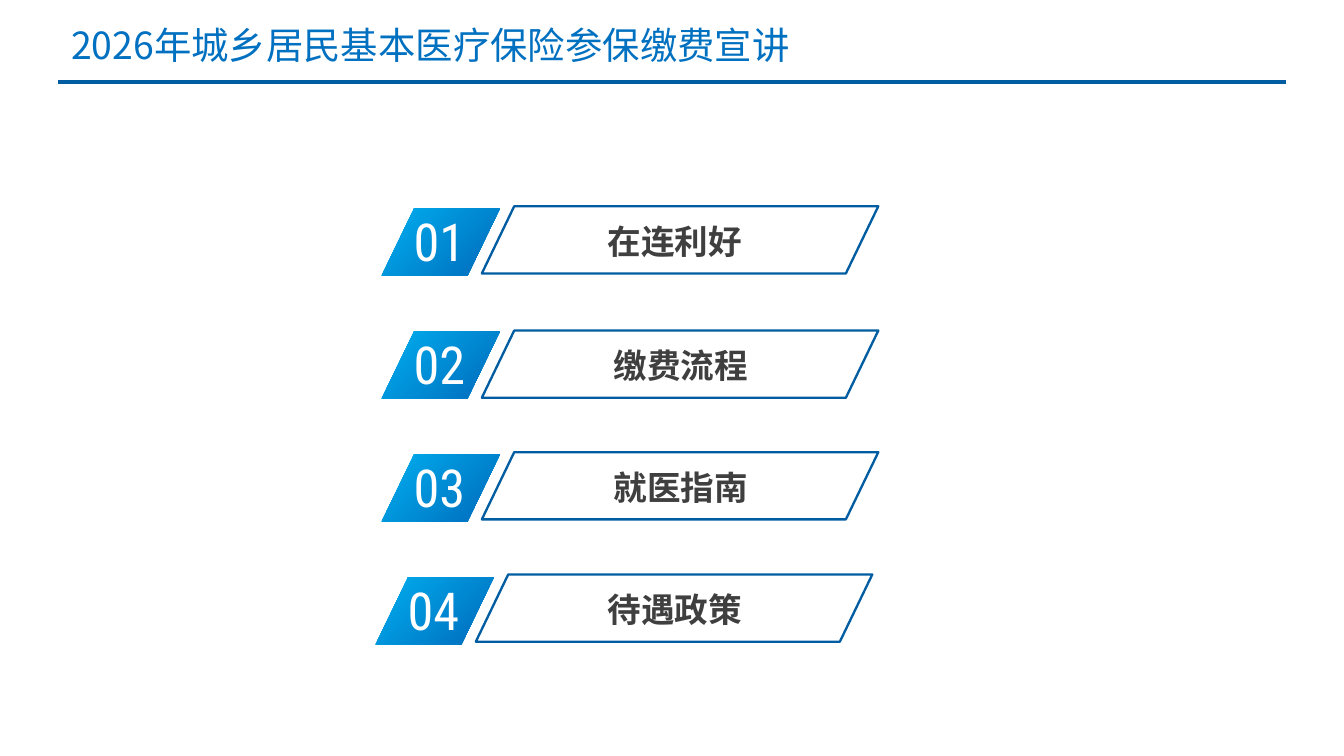
from lxml import etree
from pptx import Presentation
from pptx import util as u
from pptx.dml.color import RGBColor
from pptx.enum import shapes, text
from pptx.oxml.ns import qn

COLORS = {
    "rule": "005DA2",
    "title": "0070C0",
    "light": "00B0F0",
    "label": "3F3F3F",
    "number": "FFFFFF",
}
CJK = "Noto Sans CJK SC"
CONDENSED = "Roboto Condensed"
COLUMNS, ROWS = 100, 56.25
CELL = u.Inches(0.1)
SLANT = 0.482
FIRST_ROW, ROW_STEP = 15.5, 9.15
BAR_HEIGHT = 5

TOPICS = [
    ("在连利好", 0, -0.45, 15.35),
    ("缴费流程", 0, 0, 24.6),
    ("就医指南", 0, 0, 33.65),
    ("待遇政策", -0.45, 0, 42.75),
]


def color(name):
    return RGBColor.from_string(COLORS[name])


def grid(*cells):
    return [round(cell * CELL) for cell in cells]


def add_rule(slide):
    rule = slide.shapes.add_connector(
        shapes.MSO_CONNECTOR.STRAIGHT, *grid(95.7, 6.1, 4.3, 6.1)
    )
    rule.line.color.rgb = color("rule")
    rule.line.width = u.Pt(2)
    etree.SubElement(rule.element.spPr, qn("a:effectLst"))


def add_words(slide, place, words, size, face, shade, centered=False, bold=False):
    box = slide.shapes.add_textbox(*grid(*place))
    frame = box.text_frame
    frame.word_wrap = True
    frame.text = words
    paragraph = frame.paragraphs[0]
    if centered:
        paragraph.alignment = text.PP_ALIGN.CENTER
        frame.margin_left = frame.margin_right = u.Inches(0.07)
        frame.margin_top = frame.margin_bottom = u.Inches(0.04)
    font = paragraph.runs[0].font
    font.size = u.Pt(size)
    font.name = face
    font.bold = bold
    font.color.rgb = color(shade)
    properties = paragraph.runs[0].font._element
    etree.SubElement(properties, qn("a:ea"), typeface=face)


def add_slanted(slide, place):
    bar = slide.shapes.add_shape(shapes.MSO_SHAPE.PARALLELOGRAM, *grid(*place))
    bar.adjustments[0] = SLANT
    bar.shadow.inherit = False
    return bar


def add_badge(slide, left, top, number):
    badge = add_slanted(slide, (left, top, 8.8, BAR_HEIGHT))
    badge.line.fill.background()
    badge.fill.gradient()
    badge.fill.gradient_angle = 315
    start, end = badge.fill.gradient_stops
    start.color.rgb, start.position = color("light"), 0
    end.color.rgb, end.position = color("title"), 0.91
    add_words(slide, (left + 1.4, top - 0.4, 8.4, 4.9), number, 28, CONDENSED, "number")


def add_topic(slide, left, top, label, nudge):
    add_words(
        slide, (left + 4 + nudge, top + 0.7, 21.6, 3.8), label, 18, CJK, "label",
        centered=True, bold=True,
    )
    outline = add_slanted(slide, (left, top, 29.5, BAR_HEIGHT))
    outline.fill.background()
    outline.line.color.rgb = color("rule")
    outline.line.width = u.Pt(1.25)


def main():
    deck = Presentation()
    deck.slide_width, deck.slide_height = grid(COLUMNS, ROWS)
    slide = deck.slides.add_slide(deck.slide_layouts[6])
    add_rule(slide)
    add_words(
        slide, (4.3, 1.15, 76.9, 4.4), "2026年城乡居民基本医疗保险参保缴费宣讲",
        20, CJK, "title",
    )
    for index, (label, shift, nudge, top) in enumerate(TOPICS):
        add_badge(slide, 28.4 + shift, FIRST_ROW + index * ROW_STEP, f"{index + 1:02}")
        add_topic(slide, 35.85 + shift, top, label, nudge)
    deck.save("out.pptx")


if __name__ == "__main__":
    main()
